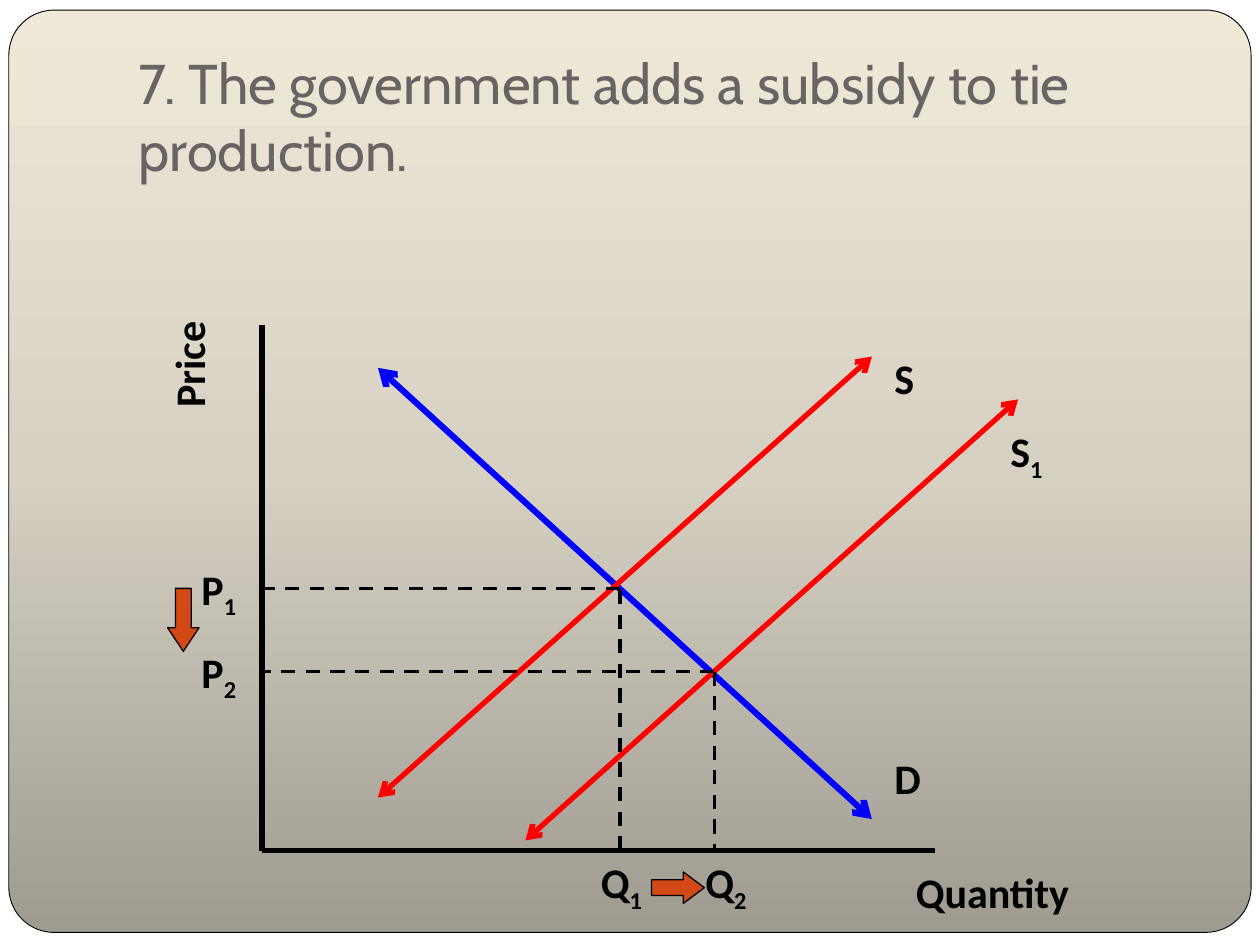
from copy import deepcopy
from dataclasses import dataclass

from lxml import etree
from pptx import Presentation
from pptx import util as u
from pptx.dml.color import RGBColor
from pptx.enum import dml, shapes, text
from pptx.oxml import ns

BLACK = RGBColor(0x00, 0x00, 0x00)
WHITE = RGBColor(0xFF, 0xFF, 0xFF)
DEMAND_BLUE = RGBColor(0x00, 0x00, 0xFF)
SUPPLY_RED = RGBColor(0xFF, 0x00, 0x00)
SHIFT_ORANGE = RGBColor(0xD3, 0x48, 0x17)
TITLE_GREY = RGBColor(0x69, 0x64, 0x64)
PANEL_DARK = RGBColor(0x9F, 0x9B, 0x91)
PANEL_MIDDLE = RGBColor(0xD7, 0xD1, 0xC4)
PANEL_LIGHT = RGBColor(0xF0, 0xE9, 0xD8)

ORIGIN_X, ORIGIN_Y = 2.08, 6.75
Q1, Q2 = 4.92, 5.67
P1, P2 = 4.67, 5.33


@dataclass(frozen=True)
class Line:
    x1: float
    y1: float
    x2: float
    y2: float
    color: RGBColor = BLACK
    width: float = 3
    dashed: bool = False
    arrows: bool = False


@dataclass(frozen=True)
class Label:
    wording: str
    left: float
    top: float
    width: float = 0.92
    subscript: str = ""
    rotation: float = 0


@dataclass(frozen=True)
class Shift:
    preset: shapes.MSO_SHAPE
    left: float
    top: float
    width: float
    height: float
    head: float


AXES = [
    Line(ORIGIN_X, 2.58, ORIGIN_X, ORIGIN_Y),
    Line(ORIGIN_X, ORIGIN_Y, 7.42, ORIGIN_Y),
]
CURVES = [
    Line(3, 2.92, 6.92, 6.5, DEMAND_BLUE, 3.5, arrows=True),
    Line(3, 6.33, 6.92, 2.83, SUPPLY_RED, arrows=True),
    Line(4.17, 6.67, 8.08, 3.17, SUPPLY_RED, arrows=True),
]
GUIDES = [
    guide
    for quantity, price in ((Q1, P1), (Q2, P2))
    for guide in (
        Line(quantity, price, ORIGIN_X, price, width=2, dashed=True),
        Line(quantity, ORIGIN_Y if price == P1 else price,
             quantity, price if price == P1 else ORIGIN_Y, width=2, dashed=True),
    )
]
LABELS = [
    Label("Quantity", 7.17, 6.83, 1.92),
    Label("Price", 0.83, 2.42, 1.33, rotation=270),
    Label("D", 7, 5.92, 1.08),
    Label("S", 7, 2.75),
    Label("S", 7.92, 3.33, subscript="1"),
    Label("P", 1.5, 4.42, subscript="1"),
    Label("P", 1.5, 5.08, subscript="2"),
    Label("Q", 4.67, 6.75, subscript="1"),
    Label("Q", 5.5, 6.75, 1, subscript="2"),
]
SHIFTS = [
    Shift(shapes.MSO_SHAPE.DOWN_ARROW, 1.33, P1, 0.25, 0.5, 0.75),
    Shift(shapes.MSO_SHAPE.RIGHT_ARROW, 5.17, 6.92, 0.42, 0.25, 0.667),
]


def add_text(paragraph, wording: str, *, font: str = "Calibri", size: float = 24,
             color: RGBColor = BLACK, bold: bool = True, baseline: int = 0) -> None:
    run = paragraph.add_run()
    run.text = wording
    run.font.name = font
    run.font.size = u.Pt(size)
    run.font.color.rgb = color
    run.font.bold = bold
    if baseline:
        run.font._element.set("baseline", str(baseline * 1000))


def draw_panel(slide) -> None:
    panel = slide.shapes.add_shape(
        shapes.MSO_SHAPE.ROUNDED_RECTANGLE,
        u.Inches(0.07), u.Inches(0.08), u.Inches(9.86), u.Inches(7.32))
    panel.adjustments[0] = 0.049
    panel.shadow.inherit = False
    panel.line.color.rgb = BLACK
    panel.line.width = u.Pt(0.5)
    panel.fill.gradient()
    panel.fill.gradient_angle = 90
    bottom, top = panel.fill.gradient_stops
    bottom.color.rgb, bottom.position = PANEL_MIDDLE, 0.5
    middle = deepcopy(bottom._gs)
    bottom.color.rgb, bottom.position = PANEL_DARK, 0
    top.color.rgb, top.position = PANEL_LIGHT, 1
    bottom._gs.addnext(middle)
    slide.shapes._spTree.insert(2, panel._element)


def draw_title(slide, wording: str) -> None:
    title = slide.shapes.title
    title.left, title.top = u.Inches(1), u.Inches(0.3)
    title.width, title.height = u.Inches(8.5), u.Inches(1.25)
    frame = title.text_frame
    frame.word_wrap = True
    frame.auto_size = text.MSO_AUTO_SIZE.NONE
    frame.vertical_anchor = text.MSO_ANCHOR.BOTTOM
    frame.margin_bottom = u.Inches(0.1)
    paragraph = frame.paragraphs[0]
    paragraph.alignment = text.PP_ALIGN.LEFT
    add_text(paragraph, wording, font="Cabin", size=32, color=TITLE_GREY, bold=False)


def draw_line(slide, line: Line) -> None:
    connector = slide.shapes.add_connector(
        shapes.MSO_CONNECTOR.STRAIGHT,
        u.Inches(line.x1), u.Inches(line.y1), u.Inches(line.x2), u.Inches(line.y2))
    connector.line.color.rgb = line.color
    connector.line.width = u.Pt(line.width)
    if line.dashed:
        connector.line.dash_style = dml.MSO_LINE.DASH
    if line.arrows:
        for end in ("a:headEnd", "a:tailEnd"):
            etree.SubElement(connector.line._get_or_add_ln(), ns.qn(end), type="arrow")
    etree.SubElement(connector._element.spPr, ns.qn("a:effectLst"))


def draw_label(slide, label: Label) -> None:
    box = slide.shapes.add_textbox(
        u.Inches(label.left), u.Inches(label.top), u.Inches(label.width), u.Inches(0.5))
    box.rotation = label.rotation
    box.text_frame.word_wrap = True
    box.text_frame.auto_size = text.MSO_AUTO_SIZE.SHAPE_TO_FIT_TEXT
    paragraph = box.text_frame.paragraphs[0]
    add_text(paragraph, label.wording)
    if label.subscript:
        add_text(paragraph, label.subscript, baseline=-25)


def draw_shift(slide, shift: Shift) -> None:
    arrow = slide.shapes.add_shape(
        shift.preset, u.Inches(shift.left), u.Inches(shift.top),
        u.Inches(shift.width), u.Inches(shift.height))
    arrow.adjustments[0] = 0.5
    arrow.adjustments[1] = shift.head
    arrow.shadow.inherit = False
    arrow.fill.solid()
    arrow.fill.fore_color.rgb = SHIFT_ORANGE
    arrow.line.color.rgb = BLACK
    arrow.line.width = u.Pt(0.75)


def main() -> None:
    deck = Presentation()
    deck.slide_width, deck.slide_height = u.Inches(10), u.Inches(7.5)
    slide = deck.slides.add_slide(deck.slide_layouts[5])
    slide.background.fill.solid()
    slide.background.fill.fore_color.rgb = WHITE
    draw_panel(slide)
    draw_title(slide, "7. The government adds a subsidy to tie production.")
    for line in AXES + CURVES + GUIDES:
        draw_line(slide, line)
    for label in LABELS:
        draw_label(slide, label)
    for shift in SHIFTS:
        draw_shift(slide, shift)
    deck.save("out.pptx")


if __name__ == "__main__":
    main()
